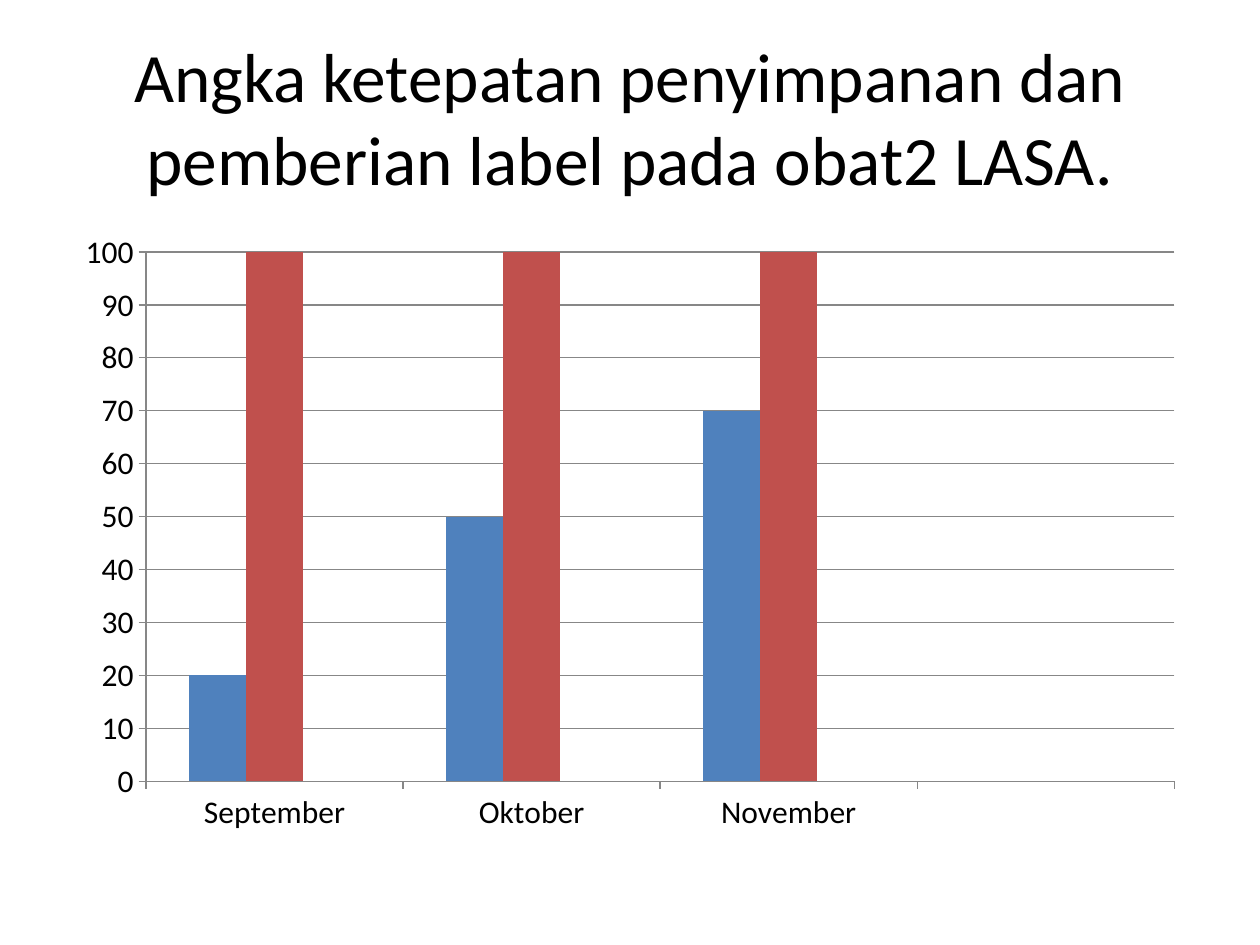
from dataclasses import dataclass

from pptx import Presentation
from pptx.chart.data import CategoryChartData
from pptx.dml.color import RGBColor
from pptx.enum.chart import XL_CHART_TYPE, XL_TICK_MARK
from pptx.enum.text import MSO_ANCHOR, PP_ALIGN
from pptx.util import Pt

CLUSTERED = XL_CHART_TYPE.COLUMN_CLUSTERED
TICK_OUTSIDE = XL_TICK_MARK.OUTSIDE
TICK_NONE = XL_TICK_MARK.NONE
MIDDLE = MSO_ANCHOR.MIDDLE
CENTER = PP_ALIGN.CENTER
PX = 9144


@dataclass(frozen=True)
class Theme:
    font: str = "Calibri"
    title_size: float = 39.6
    chart_size: float = 18
    line_width: float = 0.75
    background: RGBColor = RGBColor(0xFF, 0xFF, 0xFF)
    text: RGBColor = RGBColor(0x00, 0x00, 0x00)
    line: RGBColor = RGBColor(0x87, 0x87, 0x87)
    blue: RGBColor = RGBColor(0x4F, 0x81, 0xBD)
    red: RGBColor = RGBColor(0xC0, 0x50, 0x4D)
    green: RGBColor = RGBColor(0x9B, 0xBB, 0x59)


theme = Theme()


def style_font(font, size):
    font.name = theme.font
    font.size = Pt(size)
    font.color.rgb = theme.text


presentation = Presentation()
presentation.slide_width = 1000 * PX
presentation.slide_height = 750 * PX
slide = presentation.slides.add_slide(presentation.slide_layouts[6])
slide.background.fill.solid()
slide.background.fill.fore_color.rgb = theme.background

title = slide.shapes.add_textbox(50 * PX, 30 * PX, 900 * PX, 125 * PX)
title.text_frame.word_wrap = True
title.text_frame.vertical_anchor = MIDDLE
paragraph = title.text_frame.paragraphs[0]
paragraph.alignment = CENTER
run = paragraph.add_run()
run.text = "Angka ketepatan penyimpanan dan pemberian label pada obat2 LASA."
style_font(run.font, theme.title_size)

series_rows = [
    ("Series 1", (20, 50, 70, None), theme.blue),
    ("Series 2", (100, 100, 100, None), theme.red),
    ("Series 3", (None, None, None, None), theme.green),
]
chart_data = CategoryChartData()
chart_data.categories = ["September", "Oktober", "November", ""]
for name, values, color in series_rows:
    chart_data.add_series(name, values)

chart = slide.shapes.add_chart(
    CLUSTERED, 50 * PX, 175 * PX, 900 * PX, 495 * PX, chart_data
).chart
chart.has_title = False
chart.has_legend = False
style_font(chart.font, theme.chart_size)

plot = chart.plots[0]
plot.gap_width = 150
plot.overlap = 0
plot.vary_by_categories = False
for series, (name, values, color) in zip(plot.series, series_rows):
    series.format.fill.solid()
    series.format.fill.fore_color.rgb = color
    series.invert_if_negative = False

value_axis = chart.value_axis
value_axis.minimum_scale = 0
value_axis.maximum_scale = 100
value_axis.major_unit = 10
value_axis.has_major_gridlines = True
chart.category_axis.has_major_gridlines = False
for axis in (chart.category_axis, value_axis):
    axis.major_tick_mark = TICK_OUTSIDE
    axis.minor_tick_mark = TICK_NONE

for part in (chart.category_axis, value_axis, value_axis.major_gridlines):
    part.format.line.color.rgb = theme.line
    part.format.line.width = Pt(theme.line_width)

presentation.save("out.pptx")
